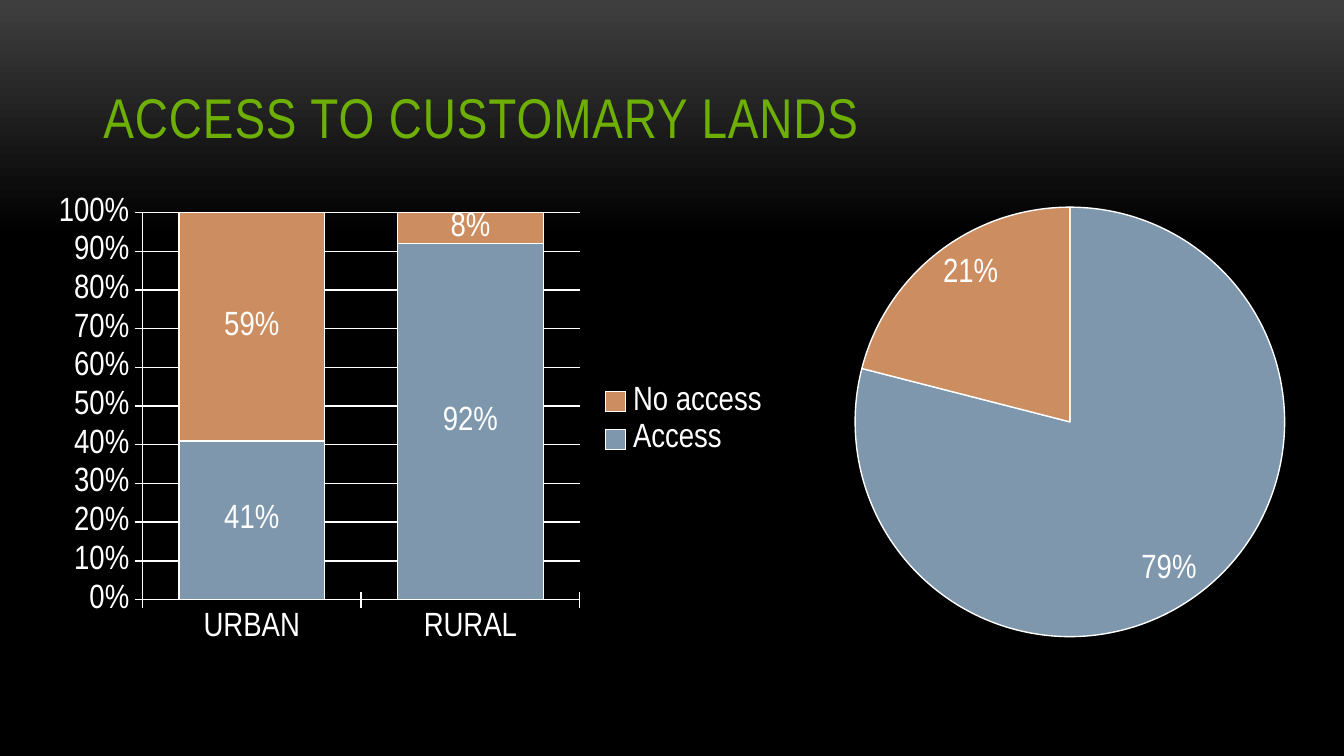
from copy import deepcopy

from lxml.etree import SubElement
from pptx import Presentation
from pptx.chart.data import CategoryChartData
from pptx.dml.color import RGBColor
from pptx.enum.chart import XL_CHART_TYPE as ChartType
from pptx.enum.chart import XL_LABEL_POSITION as LabelPosition
from pptx.enum.chart import XL_LEGEND_POSITION as LegendPosition
from pptx.enum.chart import XL_TICK_MARK as TickMark
from pptx.enum.text import MSO_ANCHOR as Anchor
from pptx.enum.text import MSO_AUTO_SIZE as AutoSize
from pptx.enum.text import PP_ALIGN as Align
from pptx.oxml.ns import qn
from pptx.util import Emu, Pt

PX = 9144000 / 1344  # EMU in one px


class Theme:
    font = "Arial Narrow"
    title_size, chart_size = Pt(30), Pt(18)
    hairline = Pt(0.75)
    green = RGBColor.from_string("6EAF05")
    white = RGBColor.from_string("FFFFFF")
    gray = RGBColor.from_string("3F3F3F")
    black = RGBColor.from_string("000000")
    access = RGBColor.from_string("7E97AD")
    no_access = RGBColor.from_string("CC8E60")


def px(*lengths):
    return [Emu(round(length * PX)) for length in lengths]


def style(part, color):
    """Fill a column series or pie slice and outline it in white."""
    part.format.fill.solid()
    part.format.fill.fore_color.rgb = color
    part.format.line.color.rgb = Theme.white
    part.format.line.width = Theme.hairline


deck = Presentation()
deck.slide_width, deck.slide_height = px(1344, 756)
slide = deck.slides.add_slide(deck.slide_layouts[5])

# Background: gray fading to black from the top
fill = slide.background.fill
fill.gradient()
fill.gradient_angle = 270
last_stop = slide.element.findall(".//" + qn("a:gs"))[-1]
last_stop.addnext(deepcopy(last_stop))
stops = [(0, Theme.gray), (0.31, Theme.black), (1, Theme.black)]
for stop, (position, color) in zip(fill.gradient_stops, stops):
    stop.position = position
    stop.color.rgb = color

# Title
title = slide.shapes.title
title.left, title.top, title.width, title.height = px(90, 31, 1165, 126)
frame = title.text_frame
frame.text = "ACCESS TO CUSTOMARY LANDS"
frame_format = {"vertical_anchor": Anchor.BOTTOM, "word_wrap": True, "auto_size": AutoSize.NONE}
for name, value in frame_format.items():
    setattr(frame, name, value)
para = frame.paragraphs[0]
para.alignment = Align.LEFT
span = para.runs[0]
span.font.name, span.font.size = Theme.font, Theme.title_size
span.font.color.rgb = Theme.green
span.font._element.set("spc", "50")

# Stacked columns: urban and rural access
column_data = CategoryChartData(number_format="0%")
column_data.categories = ["URBAN", "RURAL"]
column_data.add_series("Access", [0.41, 0.92])
column_data.add_series("No access", [0.59, 0.08])
columns = slide.shapes.add_chart(
    ChartType.COLUMN_STACKED_100, *px(44, 188, 740, 465), column_data).chart

# Pie: overall access
pie_data = CategoryChartData()
pie_data.categories = ["1", "2"]
pie_data.add_series("Series 1", [79, 21])
pie = slide.shapes.add_chart(ChartType.PIE, *px(817, 132, 527, 537), pie_data).chart

# Text and data labels of both charts
label_formats = [
    (columns, {"show_value": True, "number_format": "0%",
               "number_format_is_linked": False, "position": LabelPosition.CENTER}),
    (pie, {"show_percentage": True, "show_value": False, "number_format": "0%",
           "number_format_is_linked": False, "position": LabelPosition.INSIDE_END}),
]
for chart, label_format in label_formats:
    chart.has_title = False
    chart.has_legend = chart is columns
    plot = chart.plots[0]
    plot.has_data_labels = True
    for name, value in label_format.items():
        setattr(plot.data_labels, name, value)
    for font in (chart.font, plot.data_labels.font):
        font.name, font.size = Theme.font, Theme.chart_size
        font.color.rgb = Theme.white

# Column colours, axes and legend
column_plot = columns.plots[0]
column_plot.gap_width, column_plot.overlap = 50, 100
column_plot.vary_by_categories = False
for series, color in zip(column_plot.series, (Theme.access, Theme.no_access)):
    style(series, color)
columns.legend.position = LegendPosition.RIGHT
columns.legend.include_in_layout = False
value_axis = columns.value_axis
value_axis.has_major_gridlines = True
value_axis.tick_labels.number_format = "0%"
value_axis.tick_labels.number_format_is_linked = False
for axis in (columns.category_axis, value_axis):
    axis.major_tick_mark = TickMark.CROSS
for lined in (columns.category_axis, value_axis, value_axis.major_gridlines):
    lined.format.line.color.rgb = Theme.white
    lined.format.line.width = Theme.hairline

# Slice colours and plot area of the pie
pie_plot = pie.plots[0]
pie_plot.vary_by_categories = True
for index, color in enumerate((Theme.access, Theme.no_access)):
    style(pie_plot.series[0].points[index], color)
plot_area = pie.element.find(".//" + qn("c:plotArea"))
for old_layout in plot_area.findall(qn("c:layout")):
    plot_area.remove(old_layout)
layout = SubElement(plot_area, qn("c:layout"))
plot_area.insert(0, layout)
manual = SubElement(layout, qn("c:manualLayout"))
layout_format = {"layoutTarget": "inner", "xMode": "edge", "yMode": "edge",
                 "x": 0.07, "y": 0.14, "w": 0.82, "h": 0.8}
for name, value in layout_format.items():
    SubElement(manual, qn("c:" + name)).set("val", str(value))

deck.save("out.pptx")
